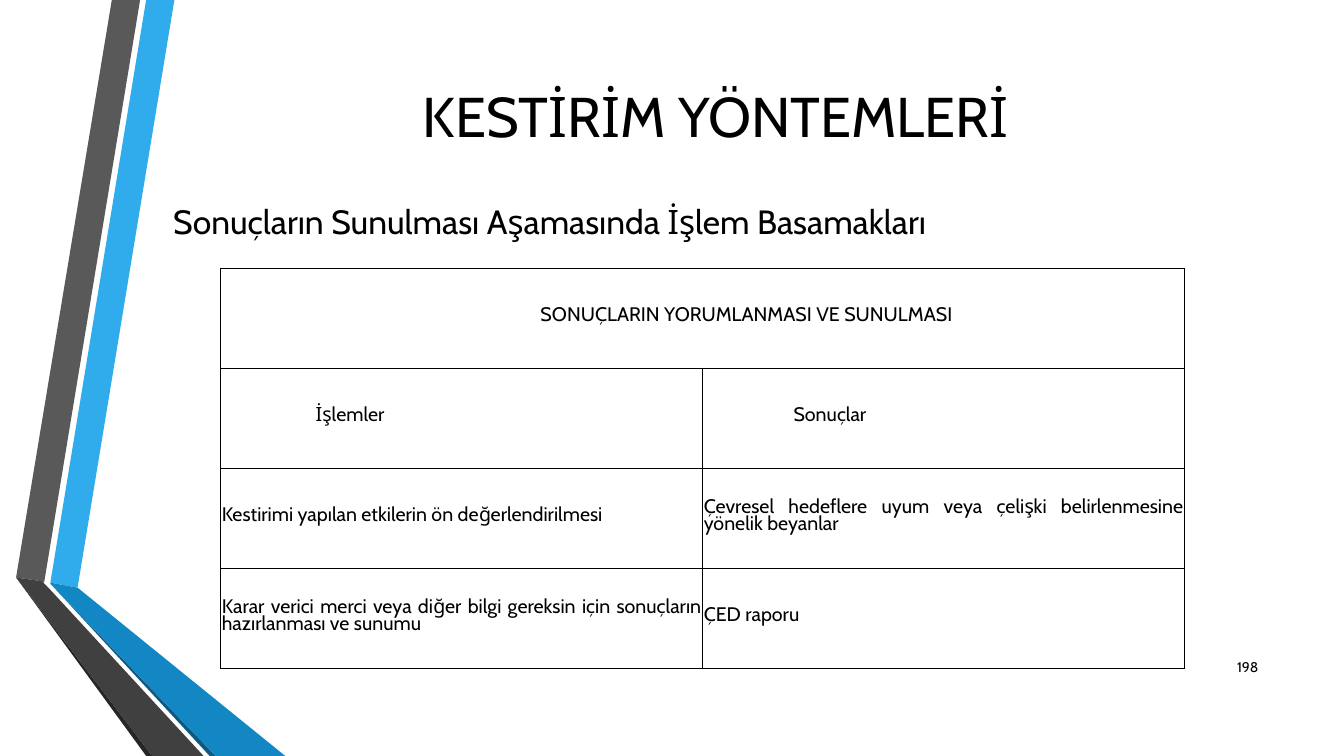
from lxml.etree import SubElement
from pptx import Presentation
from pptx.dml.color import RGBColor
from pptx.enum.text import MSO_ANCHOR, PP_ALIGN
from pptx.oxml.ns import qn
from pptx.util import Inches, Pt

FONT = "Cabin"
BLACK = "000000"
RIBBONS = [
    ("30ACEC", [(0.5, 5.78), (0.77, 5.83), (1.73, 0), (1.45, 0)]),
    ("595959", [(1.39, 0), (1.11, 0), (0.16, 5.73), (0.44, 5.77)]),
    ("262626", [(0.16, 5.73), (1.45, 7.5), (1.51, 7.5)]),
    ("0C5A82", [(0.5, 5.79), (2.08, 7.5), (2.14, 7.5)]),
    ("1287C3", [(0.5, 5.79), (2.14, 7.5), (2.83, 7.5), (0.77, 5.83), (0.5, 5.78)]),
    ("404040", [(2.02, 7.5), (0.48, 5.83), (0.43, 5.78), (0.44, 5.77), (0.16, 5.73), (1.51, 7.5)]),
]
HEADING = "SONUÇLARIN YORUMLANMASI VE SUNULMASI"
ROWS = [
    ("İşlemler", "Sonuçlar"),
    ("Kestirimi yapılan etkilerin ön değerlendirilmesi",
     "Çevresel hedeflere uyum veya çelişki belirlenmesine yönelik beyanlar"),
    ("Karar verici merci veya diğer bilgi gereksin için sonuçların hazırlanması ve sunumu",
     "ÇED raporu"),
]
COLUMN_INDENTS = (1.39, 1.35)


def rgb(value):
    """Turn a hex string into a colour."""
    return RGBColor.from_string(value)


def format_paragraph(paragraph, size, align):
    """Set the alignment of a paragraph and the font of its runs."""
    paragraph.alignment = align
    for span in paragraph.runs:
        span.font.name = FONT
        span.font.size = Pt(size)
        span.font.color.rgb = rgb(BLACK)


def add_ribbon(page, color, points):
    """Draw one filled polygon of the side ribbon."""
    corners = [(Inches(x), Inches(y)) for x, y in points]
    builder = page.shapes.build_freeform(*corners[0])
    builder.add_line_segments(corners[1:], close=True)
    shape = builder.convert_to_shape()
    shape.shadow.inherit = False
    shape.fill.solid()
    shape.fill.fore_color.rgb = rgb(color)
    shape.line.fill.background()


def add_text(page, text, bounds, size, align):
    """Add a vertically centred line of text."""
    box = page.shapes.add_textbox(*map(Inches, bounds))
    frame = box.text_frame
    frame.word_wrap = True
    frame.vertical_anchor = MSO_ANCHOR.MIDDLE
    frame.text = text
    format_paragraph(frame.paragraphs[0], size, align)


def add_borders(cell):
    """Give a cell thin black borders on every side."""
    properties = cell._tc.get_or_add_tcPr()
    for position, side in enumerate(("a:lnL", "a:lnR", "a:lnT", "a:lnB")):
        line = SubElement(properties, qn(side), w=str(Pt(1)))
        fill = SubElement(line, qn("a:solidFill"))
        SubElement(fill, qn("a:srgbClr"), val=BLACK)
        properties.insert(position, line)


def fill_cell(cell, text, align=PP_ALIGN.JUSTIFY, left=0, first=0):
    """Write a cell with its margins, indents and spacing."""
    cell.text = text
    cell.vertical_anchor = MSO_ANCHOR.MIDDLE
    cell.margin_left = cell.margin_right = Inches(0.01)
    cell.margin_top = cell.margin_bottom = 0
    paragraph = cell.text_frame.paragraphs[0]
    format_paragraph(paragraph, 14, align)
    paragraph.line_spacing = Pt(12.2)
    paragraph.space_before = Pt(39)
    properties = paragraph._p.get_or_add_pPr()
    properties.set("marL", str(Inches(left)))
    properties.set("indent", str(Inches(first)))


def add_steps_table(page):
    """Add the table of operations and results."""
    bounds = map(Inches, (2.19, 2.66, 9.56, 3.97))
    table = page.shapes.add_table(len(ROWS) + 1, 2, *bounds).table
    table.first_row = table.horz_banding = False
    table.cell(0, 0).merge(table.cell(0, 1))
    for cell in table.iter_cells():
        cell.fill.background()
        add_borders(cell)
    fill_cell(table.cell(0, 0), HEADING, PP_ALIGN.CENTER, 1.33, -0.46)
    for column, indent in enumerate(COLUMN_INDENTS):
        fill_cell(table.cell(1, column), ROWS[0][column], left=indent, first=-0.46)
        for row, texts in enumerate(ROWS[1:], start=2):
            fill_cell(table.cell(row, column), texts[column])


def main():
    """Build the slide and save it."""
    deck = Presentation()
    deck.slide_width, deck.slide_height = Inches(13.33), Inches(7.5)
    page = deck.slides.add_slide(deck.slide_layouts[6])
    for color, points in RIBBONS:
        add_ribbon(page, color, points)
    add_text(page, "KESTİRİM YÖNTEMLERİ", (1.62, 0.75, 10.96, 0.78), 40, PP_ALIGN.CENTER)
    add_text(page, "Sonuçların Sunulması Aşamasında İşlem Basamakları",
             (1.62, 1.89, 10.96, 0.6), 24, PP_ALIGN.LEFT)
    add_text(page, "198", (11.98, 6.42, 0.6, 0.4), 10, PP_ALIGN.RIGHT)
    add_steps_table(page)
    deck.save("out.pptx")


if __name__ == "__main__":
    main()
